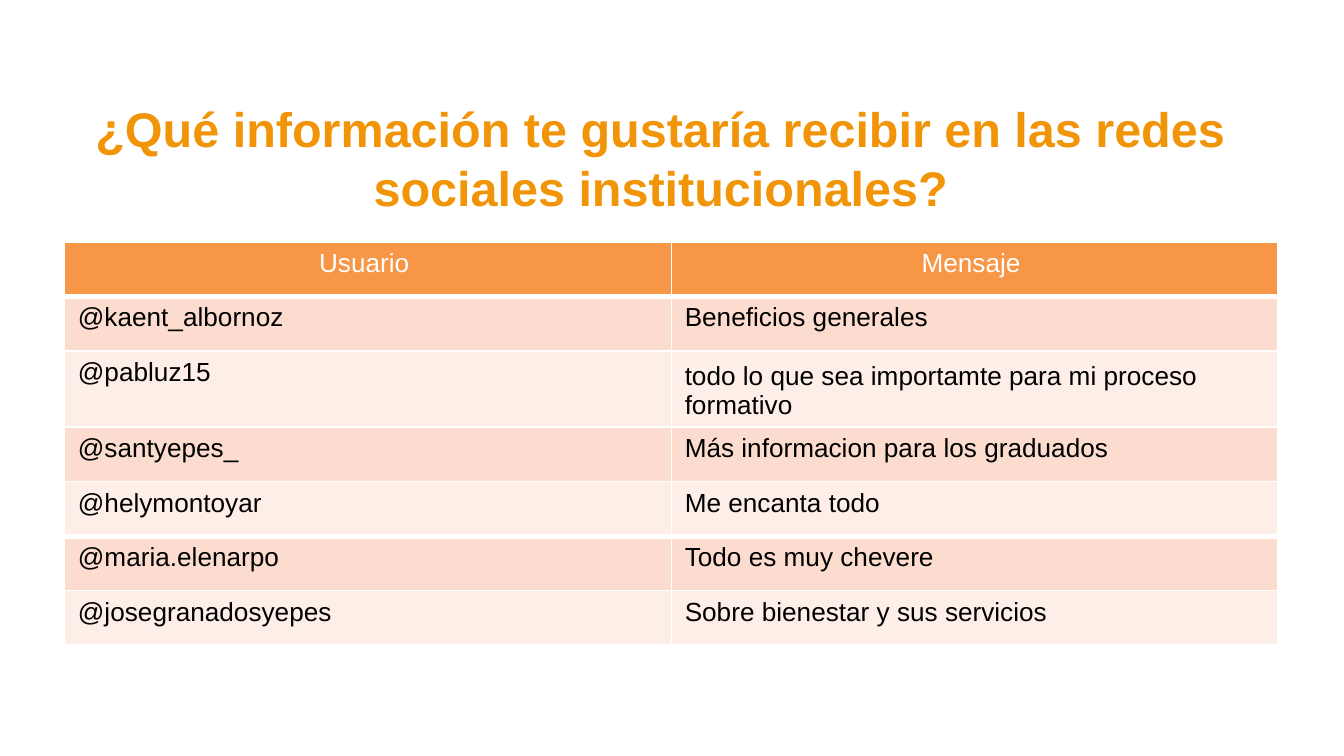
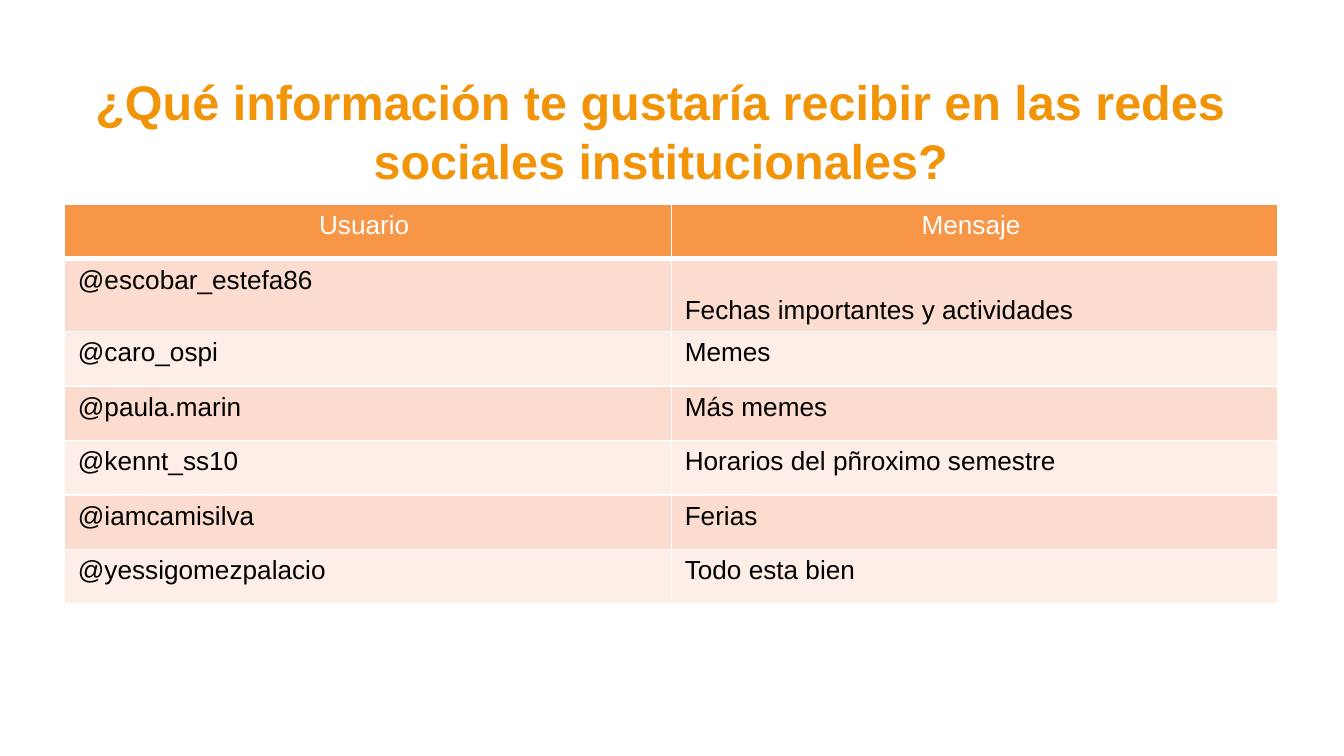
"""Build two slides listing what users would like to receive on social networks."""
from dataclasses import dataclass

from lxml.etree import SubElement
from pptx import Presentation
from pptx.dml.color import RGBColor
from pptx.enum.text import MSO_ANCHOR, PP_ALIGN
from pptx.oxml.ns import qn
from pptx.slide import Slide
from pptx.table import _Cell
from pptx.text.text import _Paragraph
from pptx.util import Inches, Pt

COLORS = {
    "title": "F19408",
    "header": "F79646",
    "odd": "FCDCCE",
    "even": "FDEEE8",
    "white": "FFFFFF",
    "black": "000000",
}
FONT = "Arial"
TITLE = "¿Qué información te gustaría recibir en las redes sociales institucionales?"
HEADERS = ("Usuario ", "Mensaje ")
SLIDE_WIDTH = Inches(10)
SLIDE_HEIGHT = SLIDE_WIDTH * 9 // 16
LEFT = Inches(0.48)
TABLE_WIDTH, TABLE_HEIGHT = Inches(9.03), Inches(3)
ROW_HEIGHT = Inches(2.84 / 7)
TALL_ROW_HEIGHT = Inches(0.54)
THIN, THICK = Pt(1), Pt(3)


@dataclass(frozen=True)
class Reply:
    user: str
    message: str
    tall: bool = False


@dataclass(frozen=True)
class ReplySlide:
    title_top: float
    table_top: float
    replies: tuple[Reply, ...]
    thick_after: tuple[int, ...] = (0,)


SLIDES = (
    ReplySlide(0.69, 1.8, (
        Reply("@kaent_albornoz", "Beneficios generales"),
        Reply("@pabluz15", "todo lo que sea importamte para mi proceso formativo", tall=True),
        Reply("@santyepes_", "Más informacion para los graduados"),
        Reply("@helymontoyar", "Me encanta todo"),
        Reply("@maria.elenarpo", "Todo es muy chevere"),
        Reply("@josegranadosyepes", "Sobre bienestar y sus servicios"),
    ), thick_after=(0, 4)),
    ReplySlide(0.49, 1.52, (
        Reply("@escobar_estefa86", "Fechas importantes y actividades", tall=True),
        Reply("@caro_ospi", "Memes"),
        Reply("@paula.marin", "Más memes"),
        Reply("@kennt_ss10", "Horarios del pñroximo semestre"),
        Reply("@iamcamisilva", "Ferias"),
        Reply("@yessigomezpalacio", "Todo esta bien"),
    )),
)


def write(p: _Paragraph, text: str, size: int, color: str,
          align: PP_ALIGN, bold: bool = False) -> None:
    """Set the text of a paragraph and format its run."""
    p.text = text
    p.alignment = align
    font = p.runs[0].font
    font.name, font.size, font.bold = FONT, Pt(size), bold
    font.color.rgb = RGBColor.from_string(COLORS[color])


def add_title(s: Slide, top: float) -> None:
    """Add the shared question as the slide title."""
    sp = s.shapes.add_textbox(LEFT, Inches(top), Inches(8.88), Inches(1.03))
    tf = sp.text_frame
    tf.word_wrap = True
    write(tf.paragraphs[0], TITLE, 26, "title", PP_ALIGN.CENTER, bold=True)


def style_cell(cell: _Cell, fill: str, top: int, bottom: int) -> None:
    """Draw white borders and the fill of a cell."""
    tc_pr = cell._tc.get_or_add_tcPr()
    for side, width in (("L", THIN), ("R", THIN), ("T", top), ("B", bottom)):
        ln = SubElement(tc_pr, qn(f"a:ln{side}"), w=str(int(width)))
        solid = SubElement(ln, qn("a:solidFill"))
        SubElement(solid, qn("a:srgbClr"), val=COLORS["white"])
    cell.fill.solid()
    cell.fill.fore_color.rgb = RGBColor.from_string(COLORS[fill])


def add_replies(s: Slide, data: ReplySlide) -> None:
    """Add the table of users and messages."""
    rows = [HEADERS, *((reply.user, reply.message) for reply in data.replies)]
    table = s.shapes.add_table(len(rows), len(HEADERS), LEFT, Inches(data.table_top),
                               TABLE_WIDTH, TABLE_HEIGHT).table
    for i, texts in enumerate(rows):
        header = i == 0
        tall = not header and data.replies[i - 1].tall
        table.rows[i].height = TALL_ROW_HEIGHT if tall else ROW_HEIGHT
        fill = "header" if header else "odd" if i % 2 else "even"
        top = THICK if i - 1 in data.thick_after else THIN
        bottom = THICK if i in data.thick_after else THIN
        for j, text in enumerate(texts):
            cell = table.cell(i, j)
            style_cell(cell, fill, top, bottom)
            write(cell.text_frame.paragraphs[0], text, 14,
                  "white" if header else "black",
                  PP_ALIGN.CENTER if header else PP_ALIGN.LEFT)
        if tall:
            table.cell(i, 1).vertical_anchor = MSO_ANCHOR.BOTTOM


def main() -> None:
    """Create and save the presentation."""
    prs = Presentation()
    prs.slide_width, prs.slide_height = SLIDE_WIDTH, SLIDE_HEIGHT
    for data in SLIDES:
        s = prs.slides.add_slide(prs.slide_layouts[6])
        add_title(s, data.title_top)
        add_replies(s, data)
    prs.save("out.pptx")


if __name__ == "__main__":
    main()
